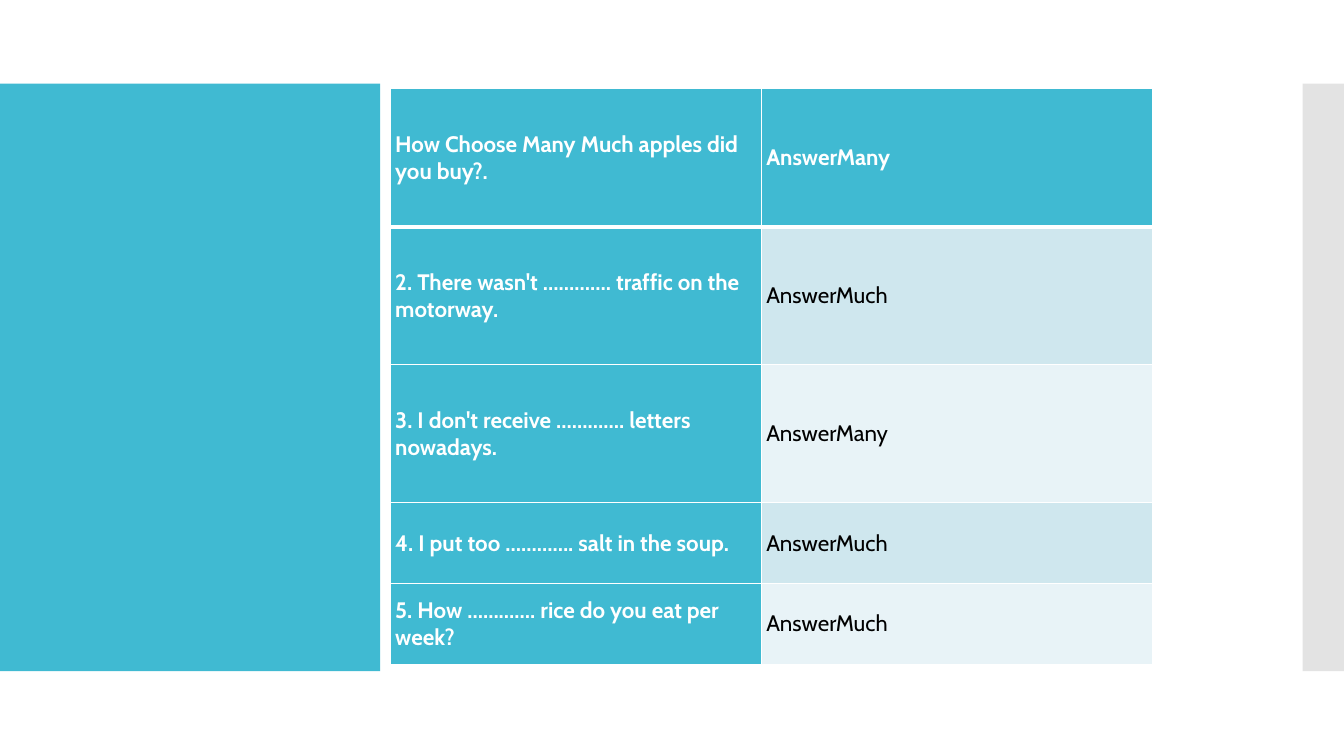
import pptx
import pptx.dml.color
import pptx.enum.shapes
import pptx.enum.text
import pptx.oxml
import pptx.oxml.ns
import pptx.util
from lxml import etree
from pptx.util import Inches

COLORS = {
    "teal": "40BAD2",
    "gray": "C8C8C8",
    "band_dark": "CFE7EE",
    "band_light": "E8F3F7",
    "white": "FFFFFF",
    "black": "000000",
}
QUIZ = [
    ("How Choose Many Much apples did you buy?.", "AnswerMany"),
    ("2. There wasn't …………. traffic on the motorway.", "AnswerMuch"),
    ("3. I don't receive …………. letters nowadays.", "AnswerMany"),
    ("4. I put too …………. salt in the soup.", "AnswerMuch"),
    ("5. How …………. rice do you eat per week?", "AnswerMuch"),
]
COLUMN_WIDTHS = [3.68, 3.88]
ROW_HEIGHTS = [1.37, 1.37, 1.37, 0.8, 0.8]


def rgb(name):
    return pptx.dml.color.RGBColor.from_string(COLORS[name])


def add_borders(cell, widths):
    """Put white lines around a cell; widths maps L, R, T, B to points."""
    properties = cell._tc.get_or_add_tcPr()
    for position, (side, width) in enumerate(widths.items()):
        line = pptx.oxml.parse_xml(
            f'<a:ln{side} {pptx.oxml.ns.nsdecls("a")} w="{pptx.util.Pt(width)}">'
            f'<a:solidFill><a:srgbClr val="{COLORS["white"]}"/></a:solidFill>'
            f'</a:ln{side}>')
        properties.insert(position, line)


presentation = pptx.Presentation()
presentation.slide_width = Inches(13.33)
presentation.slide_height = Inches(7.5)
slide = presentation.slides.add_slide(presentation.slide_layouts[6])

# Side panels
for left, width, color, opacity in [(0, 3.77, "teal", 100), (12.92, 0.41, "gray", 50)]:
    panel = slide.shapes.add_shape(
        pptx.enum.shapes.MSO_SHAPE.RECTANGLE,
        Inches(left), Inches(0.83), Inches(width), Inches(5.83))
    panel.shadow.inherit = False
    panel.fill.solid()
    panel.fill.fore_color.rgb = rgb(color)
    panel.line.fill.background()
    if opacity < 100:
        tint = panel._element.spPr.find(".//" + pptx.oxml.ns.qn("a:srgbClr"))
        alpha = etree.SubElement(tint, pptx.oxml.ns.qn("a:alpha"))
        alpha.set("val", str(opacity * 1000))

# Quiz table
quiz_table = slide.shapes.add_table(
    len(QUIZ), len(COLUMN_WIDTHS), Inches(3.87), Inches(0.88),
    Inches(sum(COLUMN_WIDTHS)), Inches(sum(ROW_HEIGHTS))).table
quiz_table.first_col = True
quiz_table.horz_banding = False
for column, width in zip(quiz_table.columns, COLUMN_WIDTHS):
    column.width = Inches(width)
for row, height in zip(quiz_table.rows, ROW_HEIGHTS):
    row.height = Inches(height)

# Questions and answers
for row_index, entry in enumerate(QUIZ):
    for column_index, text in enumerate(entry):
        is_heading = row_index == 0 or column_index == 0
        band = "band_dark" if row_index % 2 else "band_light"

        cell = quiz_table.cell(row_index, column_index)
        cell.fill.solid()
        cell.fill.fore_color.rgb = rgb("teal" if is_heading else band)
        cell.vertical_anchor = pptx.enum.text.MSO_ANCHOR.MIDDLE
        cell.margin_left = Inches(0.05)
        cell.margin_right = Inches(0.1)
        cell.margin_top = cell.margin_bottom = Inches(0.04)
        add_borders(cell, {
            "L": 1, "R": 1,
            "T": 3 if row_index == 1 else 1,
            "B": 3 if row_index == 0 else 1,
        })

        run = cell.text_frame.paragraphs[0].add_run()
        run.text = text
        run.font.name = "Cabin"
        run.font.size = pptx.util.Pt(16)
        run.font.bold = is_heading
        run.font.color.rgb = rgb("white" if is_heading else "black")

presentation.save("out.pptx")
